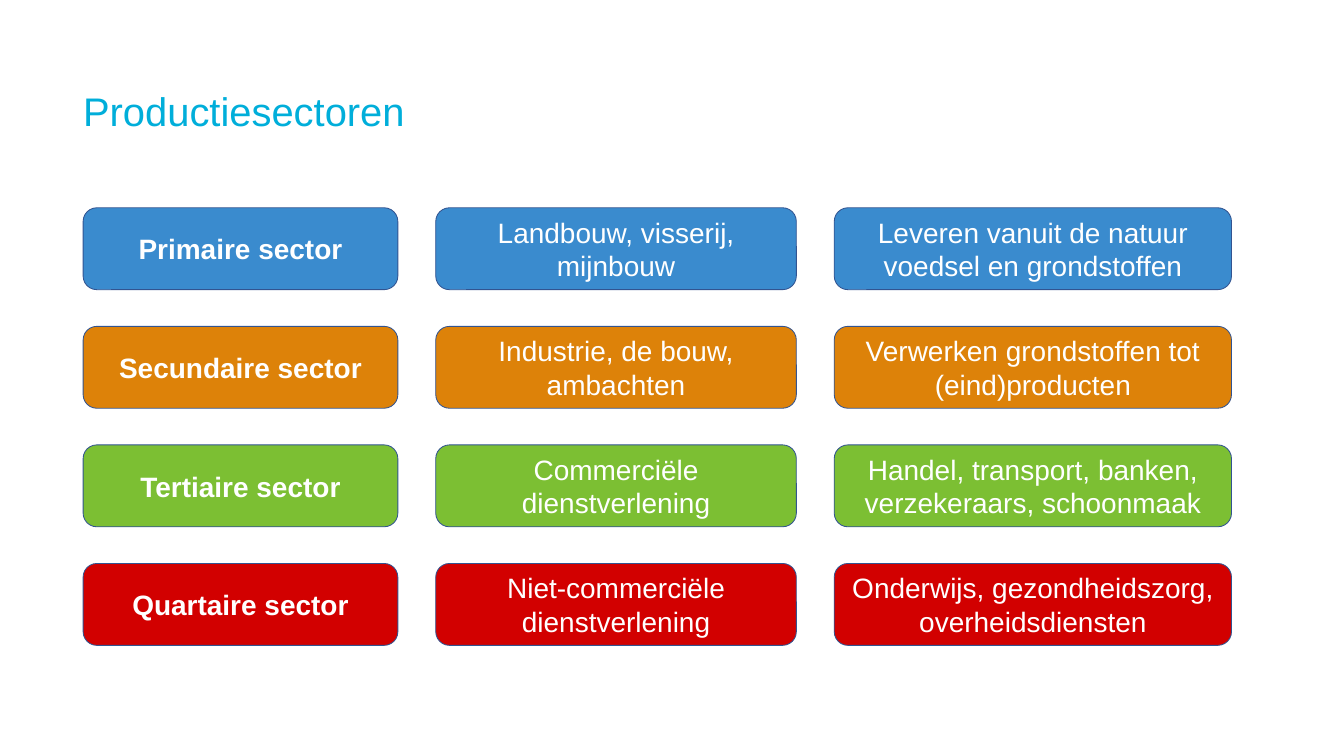
"""Build the slide on production sectors as a grid of coloured cards."""
from pptx import Presentation
from pptx import util as u
from pptx.dml.color import RGBColor
from pptx.enum import shapes, text

PX = u.Inches(0.01)
WHITE = RGBColor(0xFF, 0xFF, 0xFF)
CYAN = RGBColor(0x00, 0xAE, 0xDA)
NAVY = RGBColor(0x32, 0x54, 0x91)
BLUE = RGBColor(0x3A, 0x8B, 0xCE)
ORANGE = RGBColor(0xDD, 0x82, 0x09)
GREEN = RGBColor(0x7C, 0xBF, 0x33)
RED = RGBColor(0xD2, 0x00, 0x00)

LEFT = 136
GRID_TOP = 340
ROW_PITCH = 194
CARD_HEIGHT = 134
COLUMN_GAP = 62
COLUMN_WIDTHS = (515, 590, 650)

SECTORS = (
    (BLUE, "Primaire sector", "Landbouw, visserij, mijnbouw",
     "Leveren vanuit de natuur voedsel en grondstoffen"),
    (ORANGE, "Secundaire sector", "Industrie, de bouw, ambachten",
     "Verwerken grondstoffen tot (eind)producten"),
    (GREEN, "Tertiaire sector", "Commerciële dienstverlening",
     "Handel, transport, banken, verzekeraars, schoonmaak"),
    (RED, "Quartaire sector", "Niet-commerciële dienstverlening",
     "Onderwijs, gezondheidszorg, overheidsdiensten"),
)


def box(left, top, width, height):
    return [length * PX for length in (left, top, width, height)]


def write(frame, wording, *, size, color, bold=False, align=text.PP_ALIGN.LEFT):
    frame.word_wrap = True
    frame.vertical_anchor = text.MSO_ANCHOR.MIDDLE
    line = frame.paragraphs[0]
    line.alignment = align
    run = line.add_run()
    run.text = wording
    run.font.name = "Arial"
    run.font.size = u.Pt(size)
    run.font.bold = bold
    run.font.color.rgb = color


def add_title(slide, wording):
    frame = slide.shapes.add_textbox(*box(LEFT, 136, 1925, 91)).text_frame
    frame.margin_left = frame.margin_right = 0
    frame.margin_top = frame.margin_bottom = 0
    write(frame, wording, size=47, color=CYAN)


def add_card(slide, place, wording, fill, bold):
    card = slide.shapes.add_shape(shapes.MSO_SHAPE.ROUNDED_RECTANGLE, *place)
    card.shadow.inherit = False
    card.fill.solid()
    card.fill.fore_color.rgb = fill
    card.line.color.rgb = NAVY
    card.line.width = u.Pt(1)
    write(card.text_frame, wording, size=33, color=WHITE, bold=bold,
          align=text.PP_ALIGN.CENTER)


def add_sector(slide, row, fill, wordings):
    left = LEFT
    top = GRID_TOP + row * ROW_PITCH
    for column, (width, wording) in enumerate(zip(COLUMN_WIDTHS, wordings)):
        add_card(slide, box(left, top, width, CARD_HEIGHT), wording, fill,
                 bold=column == 0)
        left += width + COLUMN_GAP


def main():
    deck = Presentation()
    deck.slide_width = 2199 * PX
    deck.slide_height = 1237 * PX
    slide = deck.slides.add_slide(deck.slide_layouts[6])
    add_title(slide, "Productiesectoren")
    for row, (fill, *wordings) in enumerate(SECTORS):
        add_sector(slide, row, fill, wordings)
    deck.save("out.pptx")


if __name__ == "__main__":
    main()
